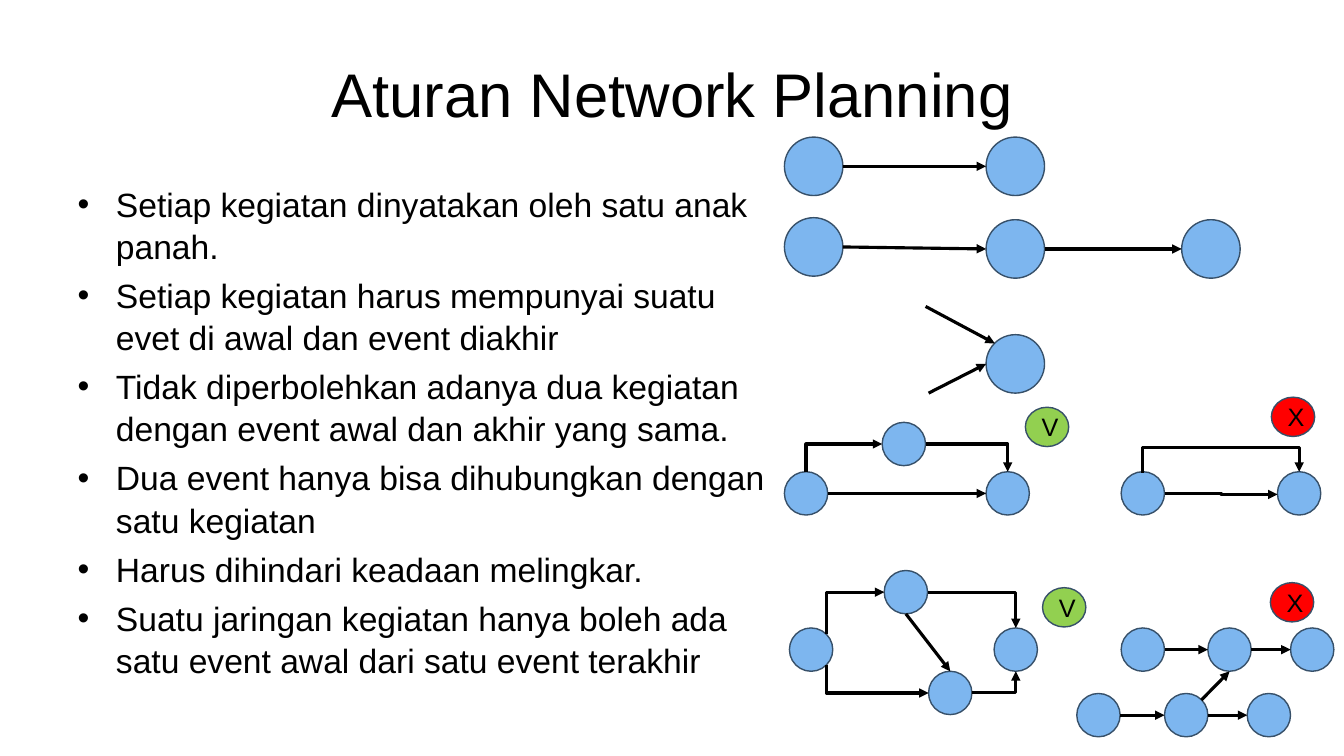
from dataclasses import dataclass

from lxml import etree
from pptx import Presentation
from pptx.dml.color import RGBColor
from pptx.enum.shapes import MSO_CONNECTOR, MSO_SHAPE
from pptx.enum.text import MSO_ANCHOR, PP_ALIGN
from pptx.oxml.ns import qn
from pptx.util import Pt

PX = 9144  # EMU per px, 100 px to the inch
FONT = "Arial"
LARGE, SMALL = 58, 43  # event diameters
COLORS = {"text": "000000", "event": "7DB6EF", "outline": "375069",
          "right": "92D050", "wrong": "FF0000"}
RULES = [
    "Setiap kegiatan dinyatakan oleh satu anak panah.",
    "Setiap kegiatan harus mempunyai suatu evet di awal dan event diakhir",
    "Tidak diperbolehkan adanya dua kegiatan dengan event awal dan akhir yang sama.",
    "Dua event hanya bisa dihubungkan dengan satu kegiatan",
    "Harus dihindari keadaan melingkar.",
    "Suatu jaringan kegiatan hanya boleh ada satu event awal dari satu event terakhir",
]


@dataclass
class Event:
    """Connection points of an event circle, in px."""
    x: int
    y: int
    size: int

    def side(self, across, down):
        return self.x + self.size * across, self.y + self.size * down

    @property
    def left(self):
        return self.side(0, 0.5)

    @property
    def right(self):
        return self.side(1, 0.5)

    @property
    def top(self):
        return self.side(0.5, 0)

    @property
    def bottom(self):
        return self.side(0.5, 1)


def emu(*lengths):
    return [round(length * PX) for length in lengths]


def rgb(name):
    return RGBColor.from_string(COLORS[name])


def set_font(paragraph, size):
    paragraph.font.name = FONT
    paragraph.font.size = Pt(size)
    paragraph.font.color.rgb = rgb("text")


def place(shape, left, top, width, height):
    shape.left, shape.top, shape.width, shape.height = emu(left, top, width, height)


# Circles and arrows
def add_circle(slide, x, y, width, height, fill):
    circle = slide.shapes.add_shape(MSO_SHAPE.OVAL, *emu(x, y, width, height))
    circle.shadow.inherit = False
    circle.fill.solid()
    circle.fill.fore_color.rgb = rgb(fill)
    circle.line.color.rgb = rgb("outline")
    circle.line.width = Pt(1)
    return circle


def add_events(slide, left, top, size, offsets):
    events = [Event(left + x, top + y, size) for x, y in offsets]
    for event in events:
        add_circle(slide, event.x, event.y, size, size, "event")
    return events


def add_verdict(slide, x, y, mark):
    verdict = add_circle(slide, x, y, 43, 39, "right" if mark == "V" else "wrong")
    frame = verdict.text_frame
    frame.vertical_anchor = MSO_ANCHOR.MIDDLE
    frame.text = mark
    frame.paragraphs[0].alignment = PP_ALIGN.CENTER
    set_font(frame.paragraphs[0], 18)


def add_arrow(slide, start, end, kind=MSO_CONNECTOR.STRAIGHT):
    arrow = slide.shapes.add_connector(kind, *emu(*start, *end))
    arrow.line.color.rgb = rgb("text")
    arrow.line.width = Pt(2.25)
    etree.SubElement(arrow.line._get_or_add_ln(), qn("a:tailEnd"), type="triangle")
    etree.SubElement(arrow._element.spPr, qn("a:effectLst"))
    return arrow


def add_elbow(slide, start, end, upright=False, bends=1, bend_at=None):
    """Bent arrow; an upright one leaves its start vertically (a quarter turn)."""
    if upright:
        (x1, y1), (x2, y2) = start, end
        cx, cy, dx, dy = (x1 + x2) / 2, (y1 + y2) / 2, x2 - x1, y2 - y1
        start, end = (cx - dy / 2, cy + dx / 2), (cx + dy / 2, cy - dx / 2)
    properties = add_arrow(slide, start, end, MSO_CONNECTOR.ELBOW)._element.spPr
    if upright:
        properties.find(qn("a:xfrm")).set("rot", "5400000")
    geometry = properties.find(qn("a:prstGeom"))
    geometry.set("prst", f"bentConnector{bends + 1}")
    if bend_at is not None:
        etree.SubElement(geometry.find(qn("a:avLst")), qn("a:gd"),
                         name="adj1", fmla=f"val {bend_at * 100000}")


# Text regions
def fill_title(title, *box):
    place(title, *box)
    frame = title.text_frame
    frame.text = "Aturan Network Planning"
    frame.vertical_anchor = MSO_ANCHOR.MIDDLE
    frame.paragraphs[0].alignment = PP_ALIGN.CENTER
    set_font(frame.paragraphs[0], 44)


def fill_rules(body, *box):
    place(body, *box)
    frame = body.text_frame
    frame.text = "\n".join(RULES)
    for number, paragraph in enumerate(frame.paragraphs):
        indents = paragraph._p.get_or_add_pPr()
        indents.set("marL", str(38 * PX))
        indents.set("indent", str(-38 * PX))
        etree.SubElement(indents, qn("a:buChar"), char="•")
        paragraph.line_spacing = 1.05
        paragraph.space_before = Pt(4.8 if number else 0)
        set_font(paragraph, 24)


# Diagram regions
def draw_chain(slide, left, top, offsets):
    events = add_events(slide, left, top, LARGE, offsets)
    for before, after in zip(events, events[1:]):
        add_arrow(slide, before.right, after.left)


def draw_merge(slide, left, top):
    [merge] = add_events(slide, left, top, LARGE, [(60, 28)])
    add_arrow(slide, (left, top), merge.side(0.15, 0.15))
    add_arrow(slide, (left + 3, top + 86), merge.left)


def draw_detour(slide, left, top):
    first, last, detour = add_events(slide, left, top, SMALL, [(0, 64), (200, 64), (97, 15)])
    add_elbow(slide, first.top, detour.left, upright=True)
    add_elbow(slide, detour.right, last.top)
    add_arrow(slide, first.right, last.left)
    add_verdict(slide, left + 239, top, "V")


def draw_double_link(slide, left, top):
    first, last = add_events(slide, left, top, SMALL, [(0, 74), (155, 74)])
    (x, y), (end_x, end_y) = first.top, last.left
    add_elbow(slide, (x, y + 1), last.top, upright=True, bends=2, bend_at=25)
    add_elbow(slide, first.right, (end_x, end_y + 1), bends=2)
    add_verdict(slide, left + 149, top, "X")


def draw_network(slide, left, top):
    first, upper, last, lower = add_events(
        slide, left, top, SMALL, [(0, 57), (94, 0), (203, 57), (138, 100)])
    add_elbow(slide, first.side(0.85, 0.15), upper.left, upright=True)
    add_elbow(slide, upper.right, last.top)
    add_elbow(slide, first.side(0.85, 0.85), lower.left, upright=True)
    add_arrow(slide, upper.bottom, lower.top)
    add_elbow(slide, lower.right, last.bottom)
    add_verdict(slide, left + 251, top + 17, "V")


def draw_open_ends(slide, left, top):
    upper = add_events(slide, left, top, SMALL, [(44, 45), (130, 45), (212, 45)])
    lower = add_events(slide, left, top, SMALL, [(0, 110), (87, 110), (169, 110)])
    for row in (upper, lower):
        for before, after in zip(row, row[1:]):
            add_arrow(slide, before.right, after.left)
    add_arrow(slide, lower[1].side(0.85, 0.15), upper[1].bottom)
    add_verdict(slide, left + 192, top, "X")


def main():
    deck = Presentation()
    deck.slide_width, deck.slide_height = emu(1333, 750)
    slide = deck.slides.add_slide(deck.slide_layouts[1])
    fill_title(slide.shapes.title, 67, 30, 1200, 125)
    fill_rules(slide.placeholders[1], 67, 175, 712, 495)
    draw_chain(slide, 778, 136, [(0, 0), (200, 0)])
    draw_chain(slide, 778, 216, [(0, 0), (200, 2), (394, 2)])
    draw_merge(slide, 918, 304)
    draw_detour(slide, 778, 404)
    draw_double_link(slide, 1112, 394)
    draw_network(slide, 783, 566)
    draw_open_ends(slide, 1068, 578)
    deck.save("out.pptx")


if __name__ == "__main__":
    main()
